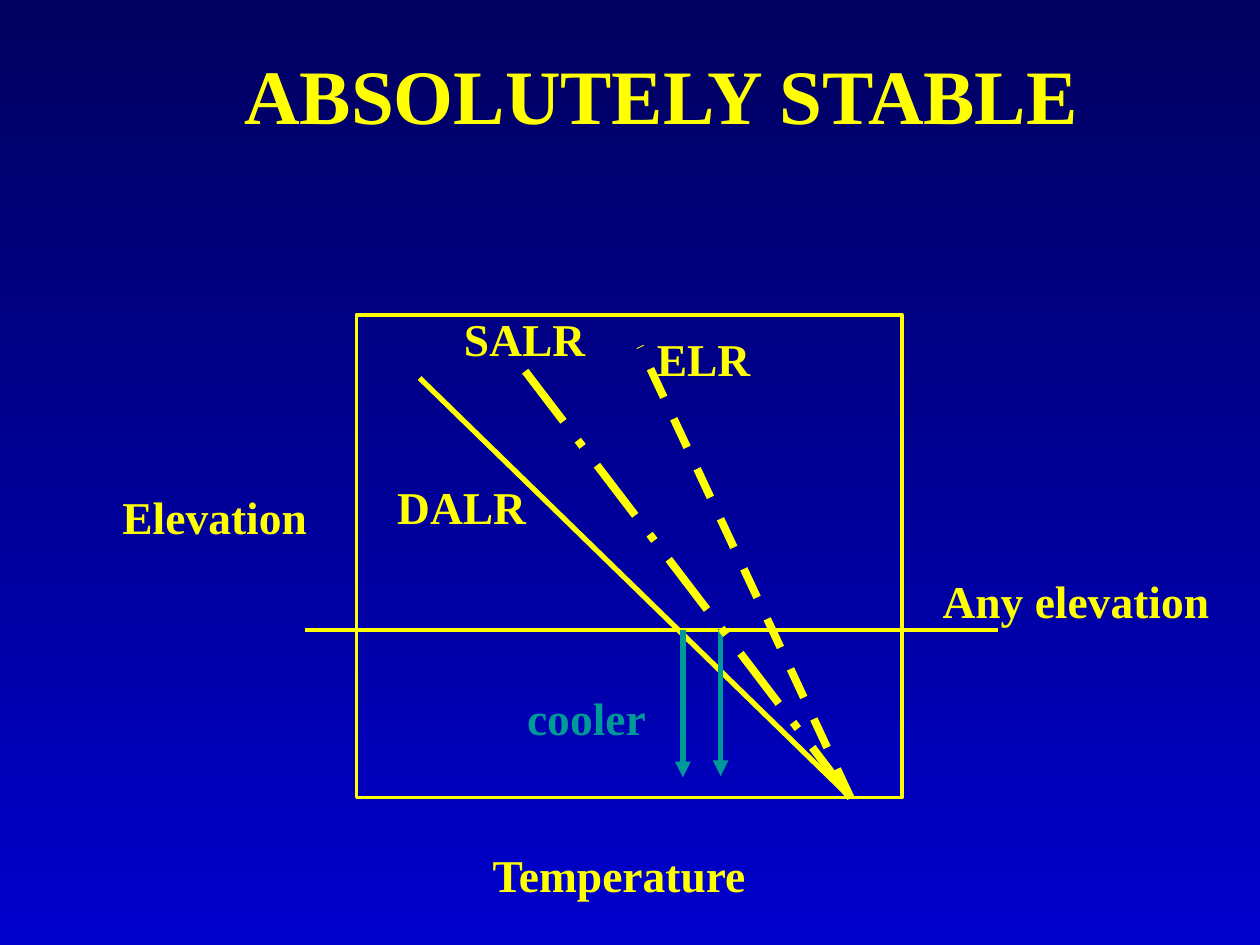
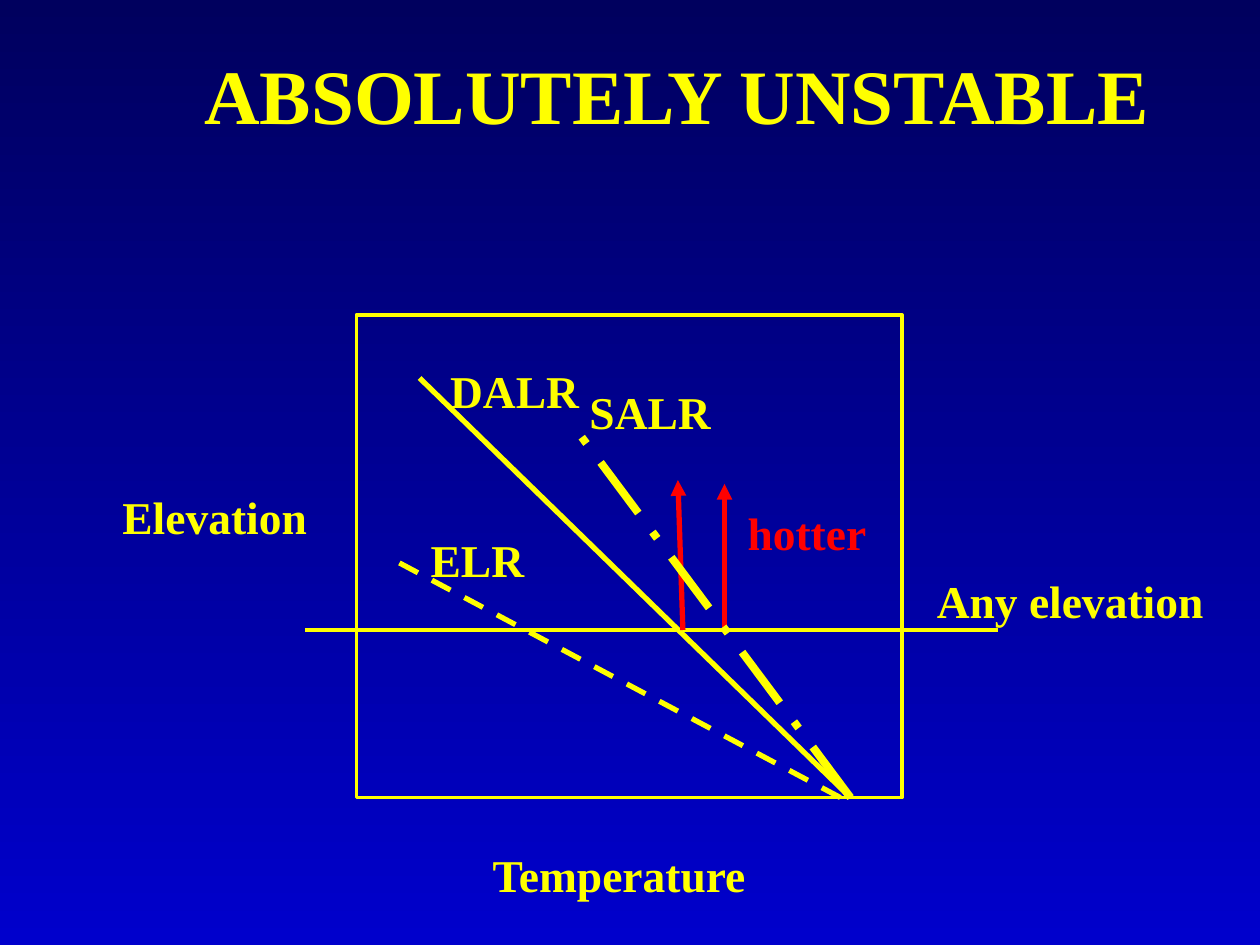
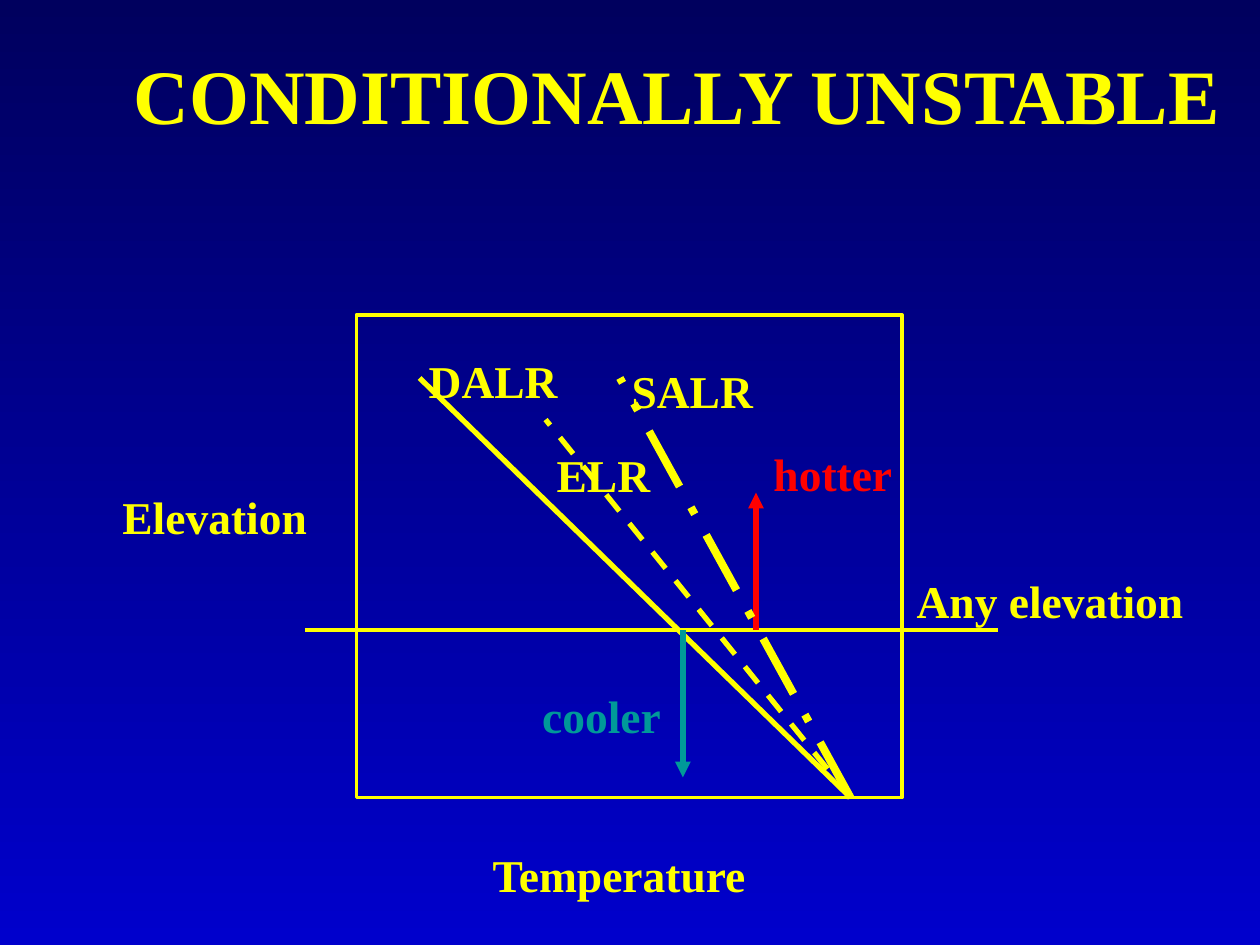
import pptx
import pptx.util
import pptx.dml.color
import pptx.enum.dml
import pptx.enum.shapes
import pptx.enum.text
import pptx.oxml.ns
import lxml.etree

COLORS = {"top": "00005E", "bottom": "0000CC", "main": "FFFF00",
          "cooler": "009999", "hotter": "FF0000"}
FONT = "Times New Roman"
LABEL_SIZE, TITLE_SIZE = 26, 44
LABEL_HEIGHT, TITLE_HEIGHT = 0.53, 0.83

# Shared diagram geometry, in inches
FRAME = (2.83, 2.5, 4.33, 3.83)
SURFACE = (6.75, 6.33)
LEVEL = 5
LEVEL_SPAN = (2.42, 7.92)

CENTER = pptx.enum.text.PP_ALIGN.CENTER
LEFT = pptx.enum.text.PP_ALIGN.LEFT
DASHES = pptx.enum.dml.MSO_LINE
LAPSE_STYLES = {"DALR": (3, None), "SALR": (4.5, DASHES.LONG_DASH_DOT), "ELR": (3, DASHES.DASH)}

AXIS_LABELS = [("Temperature", 2.58, 6.67, 4.67), ("Elevation", 0.83, 3.83, 1.75)]
DALR_RATE = ("DALR", SURFACE, (3.33, 3))

# labels: text, left, top, width[, alignment]
# rates: name, start, end[, width]; parcels: effect, start, end
SLIDES = [
    {"title": ("ABSOLUTELY STABLE", 1, 8.5),
     "labels": [("SALR", 3.58, 2.42, 1.17), ("DALR", 3, 3.75, 1.33), ("ELR", 4.92, 2.58, 1.33),
                ("Any elevation", 7.33, 4.5, 2.42), ("cooler", 3.82, 5.43, 1.67)],
     "parcels": [("cooler", (5.42, LEVEL), (5.42, 6.17)), ("cooler", (5.72, 4.99), (5.72, 6.16))],
     "rates": [("SALR", SURFACE, (4.08, 2.83)), ("ELR", SURFACE, (5.08, 2.75), 4.5)]},
    {"title": ("ABSOLUTELY UNSTABLE", 0.75, 9.25),
     "labels": [("ELR", 3.25, 4.17, 1.08), ("DALR", 3.42, 2.83, 1.33), ("SALR", 4.58, 3, 1.42, LEFT),
                ("Any elevation", 7.33, 4.5, 2.33), ("hotter", 5.74, 3.96, 1.33)],
     "parcels": [("hotter", (5.42, LEVEL), (5.38, 3.81)), ("hotter", (5.75, LEVEL), (5.75, 3.84))],
     "rates": [("ELR", (6.67, 6.33), (3.08, 4.42)), ("SALR", SURFACE, (4.58, 3.42))]},
    {"title": ("CONDITIONALLY UNSTABLE", 0.75, 9.25),
     "labels": [("ELR", 4.25, 3.5, 1.08), ("DALR", 3.25, 2.75, 1.33), ("SALR", 4.83, 2.83, 1.33),
                ("Any elevation", 7, 4.5, 2.67), ("cooler", 3.94, 5.41, 1.67),
                ("hotter", 6.04, 3.49, 1.42, LEFT)],
     "parcels": [("cooler", (5.42, LEVEL), (5.42, 6.17)), ("hotter", (6, LEVEL), (6, 3.91))],
     "rates": [("SALR", SURFACE, (4.92, 3)), ("ELR", SURFACE, (4.33, 3.33))]},
]


def rgb(role):
    return pptx.dml.color.RGBColor.from_string(COLORS[role])


def inches(*lengths):
    return [pptx.util.Inches(length) for length in lengths]


def paint_background(slide):
    fill = slide.background.fill
    fill.gradient()
    fill.gradient_angle = 270
    for stop, role in zip(fill.gradient_stops, ("top", "bottom")):
        stop.color.rgb = rgb(role)


def add_label(slide, text, left, top, width, align=CENTER, height=LABEL_HEIGHT, size=LABEL_SIZE):
    label = slide.shapes.add_textbox(*inches(left, top, width, height))
    label.text_frame.word_wrap = True
    label.text_frame.text = text
    paragraph = label.text_frame.paragraphs[0]
    paragraph.alignment = align
    font = paragraph.runs[0].font
    font.name, font.size, font.bold = FONT, pptx.util.Pt(size), True
    font.color.rgb = rgb(text if text in COLORS else "main")


def add_stroke(slide, start, end, width, role="main", dash=None, arrow=False):
    stroke = slide.shapes.add_connector(
        pptx.enum.shapes.MSO_CONNECTOR.STRAIGHT, *inches(*start, *end))
    stroke.line.color.rgb = rgb(role)
    stroke.line.width = pptx.util.Pt(width)
    if dash is not None:
        stroke.line.dash_style = dash
    qn = pptx.oxml.ns.qn
    properties = stroke._element.spPr
    if arrow:
        lxml.etree.SubElement(properties.find(qn("a:ln")), qn("a:tailEnd"), type="triangle")
    lxml.etree.SubElement(properties, qn("a:effectLst"))


def add_rate(slide, name, start, end, width=None):
    usual_width, dash = LAPSE_STYLES[name]
    add_stroke(slide, start, end, width or usual_width, dash=dash)


def add_frame(slide):
    frame = slide.shapes.add_shape(pptx.enum.shapes.MSO_SHAPE.RECTANGLE, *inches(*FRAME))
    frame.shadow.inherit = False
    frame.fill.background()
    frame.line.color.rgb = rgb("main")
    frame.line.width = pptx.util.Pt(2.25)


def build_slide(deck, content):
    slide = deck.slides.add_slide(deck.slide_layouts[6])
    paint_background(slide)

    # Frame, dry rate and reference level
    add_frame(slide)
    add_rate(slide, *DALR_RATE)
    add_stroke(slide, *[(x, LEVEL) for x in LEVEL_SPAN], 2.25)

    # Parcel arrows and the other lapse rates
    for effect, start, end in content["parcels"]:
        add_stroke(slide, start, end, 3, effect, arrow=True)
    for rate in content["rates"]:
        add_rate(slide, *rate)

    # Text
    for label in AXIS_LABELS + content["labels"]:
        add_label(slide, *label)
    title, left, width = content["title"]
    add_label(slide, title, left, 0.33, width, height=TITLE_HEIGHT, size=TITLE_SIZE)


def main():
    deck = pptx.Presentation()
    deck.slide_width, deck.slide_height = inches(10, 7.5)
    for content in SLIDES:
        build_slide(deck, content)
    deck.save("out.pptx")


if __name__ == "__main__":
    main()
